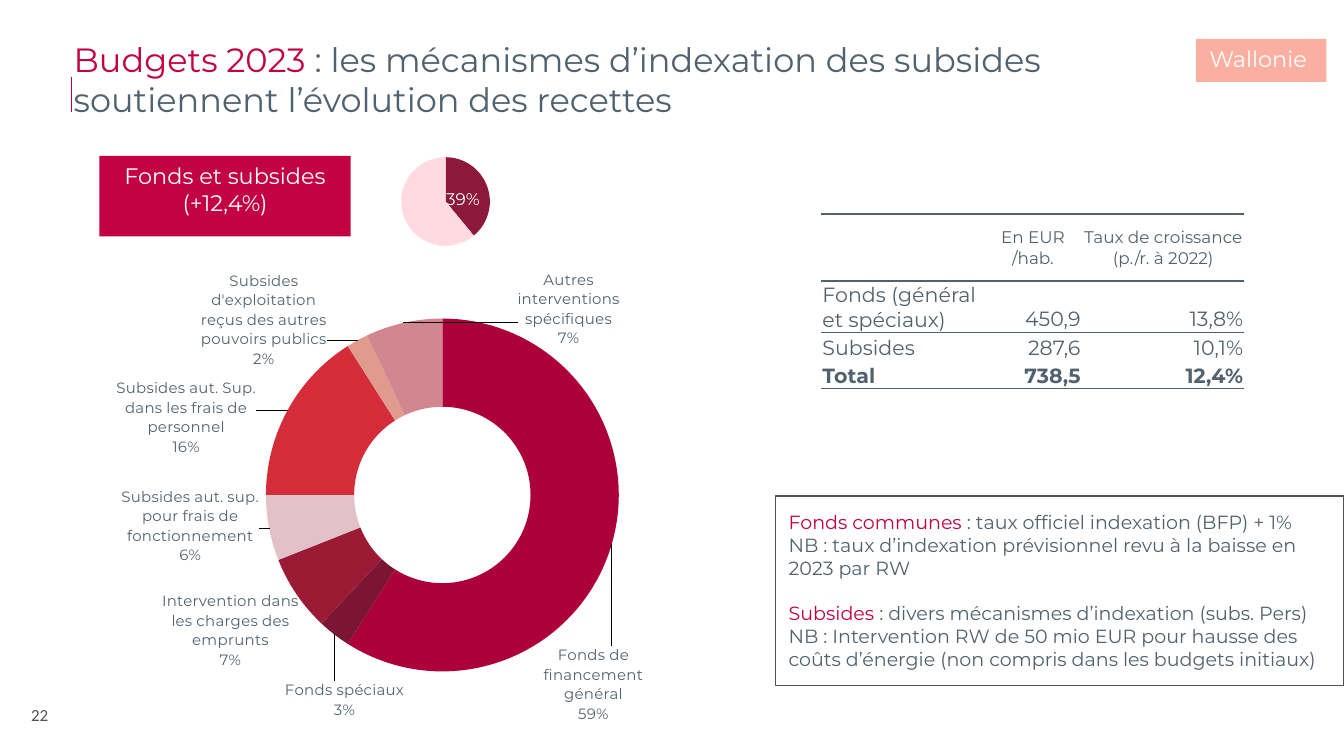
from math import cos, pi, sin

from pptx import Presentation
from pptx.chart.data import CategoryChartData
from pptx.dml.color import RGBColor
from pptx.enum.chart import XL_CHART_TYPE
from pptx.enum.shapes import MSO_CONNECTOR, MSO_SHAPE
from pptx.enum.text import MSO_ANCHOR, PP_ALIGN
from pptx.oxml import parse_xml
from pptx.oxml.ns import nsdecls, qn
from pptx.util import Inches, Pt

FONT = "Montserrat"
RED, SLATE, WHITE, GREY = "C30045", "51626F", "FFFFFF", "535353"
LEFT, CENTER, RIGHT = PP_ALIGN.LEFT, PP_ALIGN.CENTER, PP_ALIGN.RIGHT
C15 = "http://schemas.microsoft.com/office/drawing/2012/chart"


def rgb(value):
    return RGBColor.from_string(value)


def write(tf, paragraphs, size, align=LEFT, font=FONT, bold=False):
    """Fill a frame; each paragraph is a list of (text, colour) runs."""
    tf.word_wrap = True
    for i, runs in enumerate(paragraphs):
        p = tf.paragraphs[0] if i == 0 else tf.add_paragraph()
        p.alignment = align
        for text, color in runs:
            r = p.add_run()
            r.text = text
            r.font.size, r.font.name, r.font.bold = Pt(size), font, bold
            r.font.color.rgb = rgb(color)


def add_text(s, box, paragraphs, size, **style):
    sp = s.shapes.add_textbox(*map(Inches, box))
    write(sp.text_frame, paragraphs, size, **style)
    return sp.text_frame


def add_box(s, box, paragraphs, size, fill=None, line=None,
            anchor=MSO_ANCHOR.TOP, align=LEFT):
    sp = s.shapes.add_shape(MSO_SHAPE.RECTANGLE, *map(Inches, box))
    sp.shadow.inherit = False
    if fill:
        sp.fill.solid()
        sp.fill.fore_color.rgb = rgb(fill)
    else:
        sp.fill.background()
    if line:
        sp.line.color.rgb = rgb(line)
        sp.line.width = Pt(0.75)
    else:
        sp.line.fill.background()
    sp.text_frame.vertical_anchor = anchor
    write(sp.text_frame, paragraphs, size, align=align)
    return sp.text_frame


def add_line(s, x1, y1, x2, y2, color, width):
    cx = s.shapes.add_connector(MSO_CONNECTOR.STRAIGHT, *map(Inches, (x1, y1, x2, y2)))
    cx.line.color.rgb = rgb(color)
    cx.line.width = Pt(width)
    cx._element.spPr.append(parse_xml(f"<a:effectLst {nsdecls('a')}/>"))


def label_flags(category, percent):
    return (f'<c:showLegendKey val="0"/><c:showVal val="0"/><c:showCatName val="{category}"/>'
            f'<c:showSerName val="0"/><c:showPercent val="{percent}"/>'
            '<c:showBubbleSize val="0"/><c:separator>\n</c:separator>')


def label_style(size, color, wrap="square"):
    return ('<c:numFmt formatCode="0%" sourceLinked="0"/><c:spPr><a:noFill/></c:spPr>'
            f'<c:txPr><a:bodyPr wrap="{wrap}"/><a:p><a:pPr><a:defRPr sz="{size * 100}">'
            f'<a:solidFill><a:srgbClr val="{color}"/></a:solidFill><a:latin typeface="{FONT}"/>'
            '</a:defRPr></a:pPr><a:endParaRPr/></a:p></c:txPr>')


def add_pie(s, kind, box, plot_area, slices, point_labels, defaults):
    """Draw a round chart; slices are (category, value, colour)."""
    data = CategoryChartData()
    data.categories = [name for name, _, _ in slices]
    data.add_series("Series 1", [value for _, value, _ in slices])
    chart = s.shapes.add_chart(kind, *map(Inches, box), data).chart
    chart.has_legend = chart.has_title = False
    chart.font.size, chart.font.name = Pt(10), FONT
    chart.font.color.rgb = rgb(SLATE)
    plot = chart.plots[0]
    plot.vary_by_categories = True
    series = plot.series[0]
    for i, (_, _, color) in enumerate(slices):
        fmt = series.points[i].format
        fmt.fill.solid()
        fmt.fill.fore_color.rgb = rgb(color)
        fmt.line.fill.background()
    # Data labels
    series._element.find(qn("c:cat")).addprevious(parse_xml(
        f'<c:dLbls {nsdecls("c", "a")}>{"".join(point_labels)}{defaults}'
        '<c:showLeaderLines val="1"/></c:dLbls>'))
    # Plot area position
    area = chart._chartSpace.chart.plotArea
    for old in area.findall(qn("c:layout")):
        area.remove(old)
    x, y, w, h = plot_area
    area.insert(0, parse_xml(
        f'<c:layout {nsdecls("c")}><c:manualLayout><c:layoutTarget val="inner"/>'
        '<c:xMode val="edge"/><c:yMode val="edge"/>'
        f'<c:x val="{x}"/><c:y val="{y}"/><c:w val="{w}"/><c:h val="{h}"/>'
        '</c:manualLayout></c:layout>'))


def outside_labels(box, slices, centers, ring_center, ring_radius):
    """Move each label from the middle of its ring segment to its own centre."""
    style, labels, done = label_style(8, SLATE) + label_flags(1, 1), [], 0
    total = sum(value for _, value, _ in slices)
    for i, ((_, value, _), (x, y)) in enumerate(zip(slices, centers)):
        angle = 2 * pi * (done + value / 2) / total
        done += value
        dx = (x - ring_center[0] - ring_radius * sin(angle)) / box[2]
        dy = (y - ring_center[1] + ring_radius * cos(angle)) / box[3]
        labels.append(
            f'<c:dLbl><c:idx val="{i}"/><c:layout><c:manualLayout><c:x val="{dx:.4f}"/>'
            f'<c:y val="{dy:.4f}"/></c:manualLayout></c:layout>{style}'
            '<c:extLst><c:ext uri="{CE6537A1-D6FC-4f65-9D91-7224C49458BB}" '
            f'xmlns:c15="{C15}"><c15:layout><c:manualLayout><c:w val="0.22"/>'
            '<c:h val="0.17"/></c:manualLayout></c15:layout></c:ext></c:extLst></c:dLbl>')
    return labels, style


def set_border(cell, side, width):
    tag = f"a:ln{side}"
    cell._tc.get_or_add_tcPr().insert(0, parse_xml(
        f'<{tag} {nsdecls("a")} w="{Pt(width)}"><a:solidFill><a:srgbClr val="{SLATE}"/>'
        f'</a:solidFill></{tag}>'))


def add_growth_table(s):
    rows = [("", "En EUR /hab.", "Taux de croissance (p./r. à 2022)"),
            ("Fonds (général et spéciaux)", "450,9", "13,8%"),
            ("Subsides", "287,6", "10,1%"),
            ("Total", "738,5", "12,4%")]
    table = s.shapes.add_table(4, 3, *map(Inches, (6.11, 1.59, 3.15, 1.3))).table
    table.first_row = table.horz_banding = False
    table._tbl.tblPr.find(qn("a:tableStyleId")).text = "{2D5ABB26-0587-4C30-8999-92F81FD0307C}"
    for col, width in zip(table.columns, (1.21, 0.73, 1.21)):
        col.width = Inches(width)
    for row, height in zip(table.rows, (0.5, 0.38, 0.21, 0.21)):
        row.height = Inches(height)
    bottom_lines = {0: 1, 1: 0.5, 3: 0.5}
    for i, texts in enumerate(rows):
        for j, text in enumerate(texts):
            cell = table.cell(i, j)
            cell.fill.background()
            cell.margin_left = cell.margin_right = cell.margin_top = Inches(0.01)
            cell.margin_bottom = 0
            cell.vertical_anchor = MSO_ANCHOR.BOTTOM if i else MSO_ANCHOR.MIDDLE
            align = CENTER if i == 0 else RIGHT if j else LEFT
            if text:
                write(cell.text_frame, [[(text, SLATE)]], 11 if i else 9, align, bold=i == 3)
            if i in bottom_lines:
                set_border(cell, "B", bottom_lines[i])
            if i == 0:
                set_border(cell, "T", 1)


def main():
    prs = Presentation()
    # 16:9 page
    prs.slide_width = Inches(10)
    prs.slide_height = prs.slide_width * 9 // 16
    s = prs.slides.add_slide(prs.slide_layouts[6])

    # Title, accent line and page number
    add_line(s, 0.53, 0.57, 0.53, 0.83, RED, 0.75)
    add_text(s, (0.45, 0.24, 8.24, 0.55), [[
        ("Budgets 2023 ", RED),
        (": les mécanismes d’indexation des subsides soutiennent l’évolution des recettes", SLATE),
    ]], 18)
    tf = add_text(s, (0.12, 5.2, 0.35, 0.23), [[("22", GREY)]], 9.1, align=CENTER, font="Calibri")
    tf.margin_left = tf.margin_right = tf.margin_top = tf.margin_bottom = Inches(0.04)

    # Explanations
    tf = add_box(s, (5.77, 3.69, 4.23, 1.41), [
        [("Fonds communes", RED), (" : taux officiel indexation (BFP) + 1%", SLATE)],
        [("NB : taux d’indexation prévisionnel revu à la baisse en 2023 par RW", SLATE)],
        [("Subsides ", RED), (": divers mécanismes d’indexation (subs. Pers)", SLATE)],
        [("NB : Intervention RW de 50 mio EUR pour hausse des coûts d’énergie "
          "(non compris dans les budgets initiaux)", SLATE)],
    ], 10.2, line=GREY, anchor=MSO_ANCHOR.MIDDLE)
    tf.paragraphs[2].space_before = Pt(12)

    # Breakdown ring
    box = (0.28, 1.98, 4.93, 3.46)
    slices = [("Fonds de financement général", 59, "AD003A"),
              ("Fonds spéciaux", 3, "7A1633"),
              ("Intervention dans les charges des emprunts", 7, "9B1B35"),
              ("Subsides aut. sup. pour frais de fonctionnement", 6, "E2C2C8"),
              ("Subsides aut. Sup. dans les frais de personnel", 16, "D42D39"),
              ("Subsides d'exploitation reçus des autres pouvoirs publics", 2, "DF9B8E"),
              ("Autres interventions spécifiques", 7, "D28790")]
    centers = [(4.43, 5.09), (2.57, 5.21), (1.72, 4.69), (1.42, 3.91),
               (1.39, 3.1), (1.97, 2.37), (4.24, 2.29)]
    labels, defaults = outside_labels(box, slices, centers, (3.3, 3.68), 0.99)
    add_pie(s, XL_CHART_TYPE.DOUGHNUT, box, (0.257, 0.113, 0.708, 0.759),
            slices, labels, defaults)

    add_growth_table(s)

    # Region tag and section heading
    add_box(s, (8.9, 0.29, 0.97, 0.32), [[("Wallonie", WHITE)]], 12, fill="FBAFA0")
    add_box(s, (0.74, 1.16, 1.87, 0.6),
            [[("Fonds et subsides", WHITE)], [("(+12,4%)", WHITE)]], 12,
            fill="C30243", align=CENTER)

    # Share pie, with the second slice unlabelled
    hidden = '<c:dLbl><c:idx val="1"/><c:delete val="1"/></c:dLbl>'
    add_pie(s, XL_CHART_TYPE.PIE, (2.61, 0.97, 1.7, 1), (0.22, 0.2, 0.39, 0.66),
            [("1", 39, "8C193C"), ("2", 61, "FFDAE1")], [hidden],
            label_style(9, WHITE, "none") + '<c:dLblPos val="inEnd"/>' + label_flags(0, 1))

    prs.save("out.pptx")


if __name__ == "__main__":
    main()
